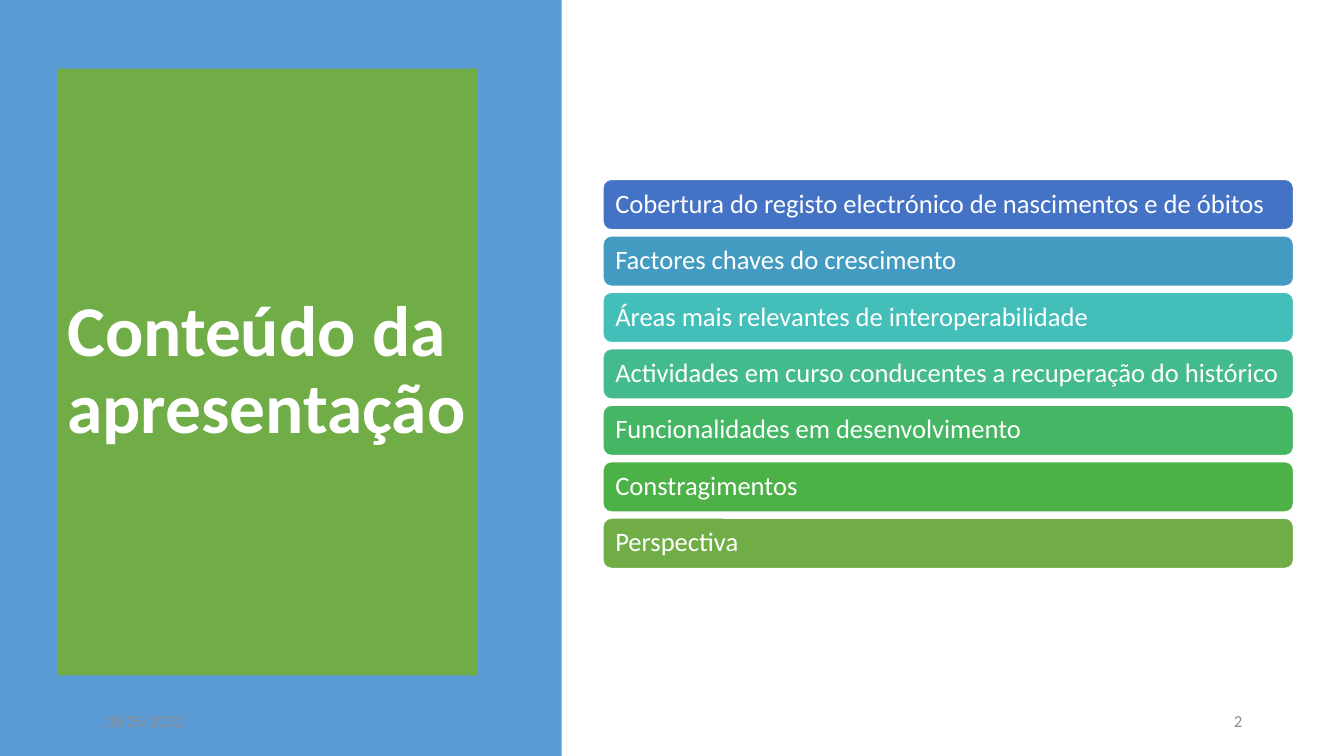
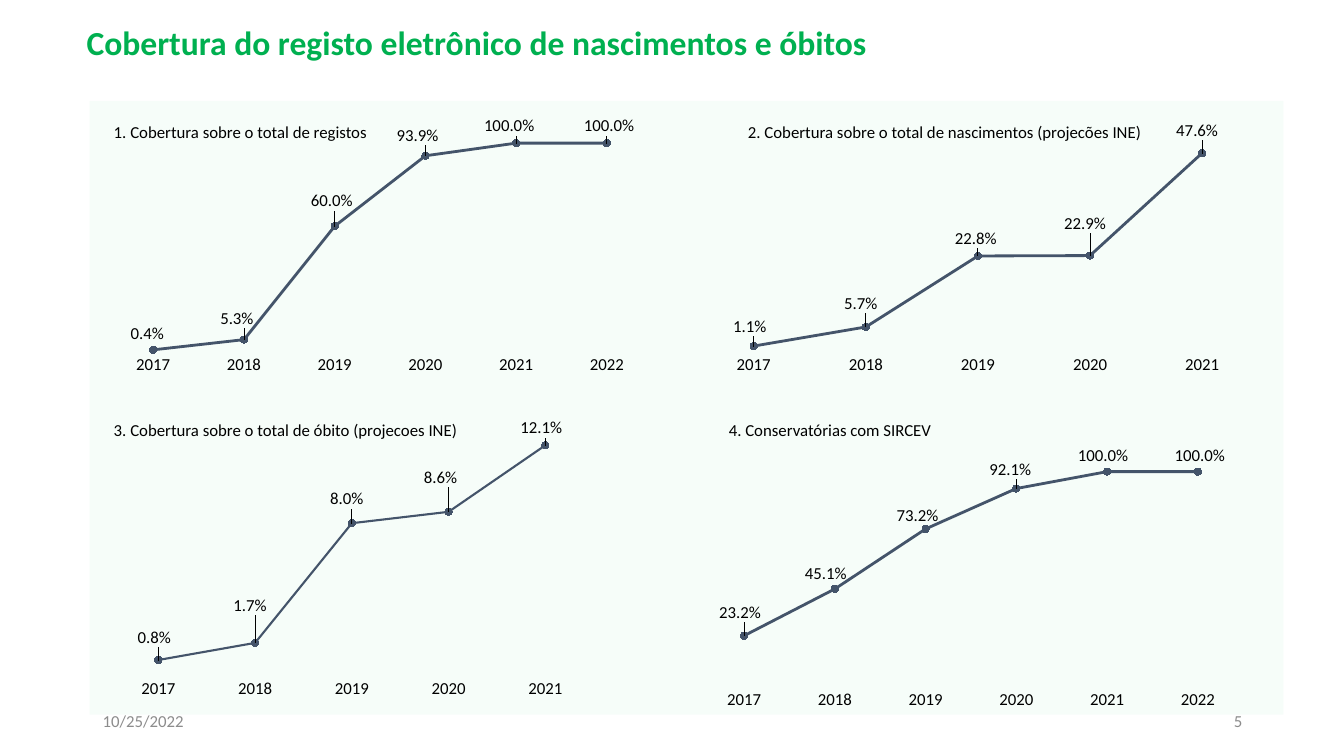
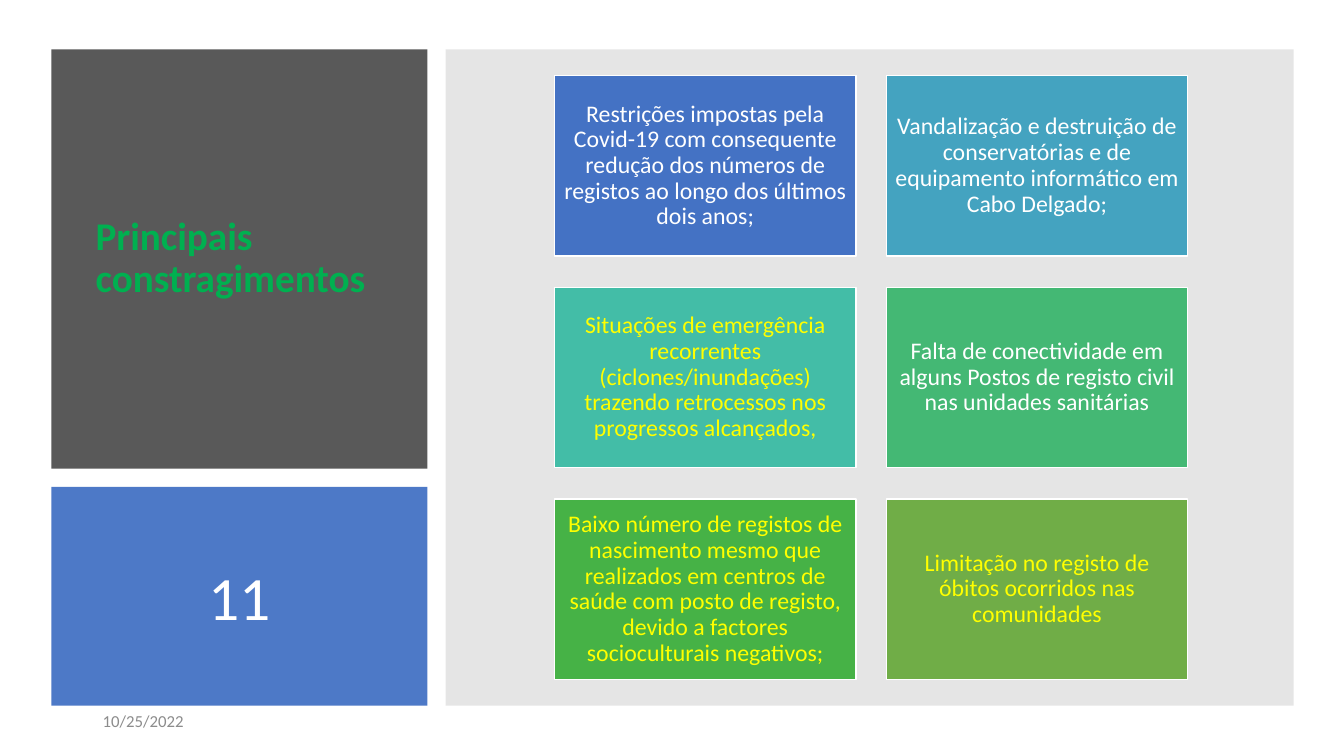
from pptx import Presentation
from pptx.chart.data import CategoryChartData
from pptx.dml.color import RGBColor
from pptx.enum.chart import XL_CHART_TYPE as ChartType, XL_LABEL_POSITION as LabelPosition
from pptx.enum.chart import XL_MARKER_STYLE as MarkerStyle, XL_TICK_MARK as TickMark
from pptx.enum.shapes import MSO_SHAPE as Preset
from pptx.enum.text import MSO_ANCHOR as Anchor, PP_ALIGN as Align
from pptx.oxml import parse_xml
from pptx.oxml.ns import nsdecls, qn
from pptx.util import Emu, Pt

EMU_PER_PX = 9144
WHITE, YELLOW, BLACK = "FFFFFF", "FFFF00", "000000"
BLUE, GREEN, TITLE_GREEN = "4472C4", "70AD47", "00B050"
FOOTER_GREY, LINE_SLATE = "8C8C8C", "44546A"


def px(length):
    return Emu(length * EMU_PER_PX)


def color(value):
    return RGBColor.from_string(value)


def manual_layout(inner=False, **values):
    target = '<c:layoutTarget val="inner"/>' if inner else ""
    modes = '<c:xMode val="edge"/><c:yMode val="edge"/>' if inner else ""
    items = "".join(f'<c:{key} val="{value:.4f}"/>' for key, value in values.items())
    return parse_xml(f'<c:layout {nsdecls("c")}><c:manualLayout>{target}{modes}{items}'
                     '</c:manualLayout></c:layout>')


def no_fill():
    return parse_xml(f'<c:spPr {nsdecls("c", "a")}><a:noFill/><a:ln><a:noFill/></a:ln></c:spPr>')


class Deck:
    font = "Calibri"
    date = "10/25/2022"

    def __init__(self):
        self.presentation = Presentation()
        self.presentation.slide_width = px(1333)
        self.presentation.slide_height = px(750)
        self.slide = None

    def add_slide(self):
        self.slide = self.presentation.slides.add_slide(self.presentation.slide_layouts[6])

    def fill_text(self, shape, text, size, ink, bold=False, align=Align.LEFT, spacing=1.0, inset=10):
        frame = shape.text_frame
        frame.word_wrap = True
        frame.vertical_anchor = Anchor.MIDDLE
        frame.margin_left = frame.margin_right = px(inset)
        frame.margin_top = frame.margin_bottom = px(5)
        frame.text = text
        paragraph = frame.paragraphs[0]
        paragraph.alignment = align
        paragraph.line_spacing = spacing
        font = paragraph.runs[0].font
        font.name, font.size, font.bold = self.font, Pt(size), bold
        font.color.rgb = color(ink)

    def box(self, at, fill, preset=Preset.RECTANGLE, opacity=100, outline=None):
        shape = self.slide.shapes.add_shape(preset, *map(px, at))
        shape.shadow.inherit = False
        shape.fill.solid()
        shape.fill.fore_color.rgb = color(fill)
        if opacity < 100:
            tint = shape.element.spPr.find(qn("a:solidFill"))[0]
            tint.append(parse_xml(f'<a:alpha {nsdecls("a")} val="{opacity * 1000}"/>'))
        if outline:
            shape.line.color.rgb = color(outline)
            shape.line.width = Pt(1)
        else:
            shape.line.fill.background()
        return shape

    def text(self, at, text, size, ink, **style):
        self.fill_text(self.slide.shapes.add_textbox(*map(px, at)), text, size, ink, **style)

    def title(self, at, text, size):
        self.text(at, text, size, TITLE_GREEN, bold=True, spacing=0.9)

    def footer(self, number=None):
        self.text((92, 695, 300, 40), self.date, 12, FOOTER_GREY)
        if number:
            self.text((942, 695, 300, 40), number, 12, FOOTER_GREY, align=Align.RIGHT)

    def line_chart(self, at, plot, top_value, width, values, offsets):
        data = CategoryChartData(number_format="0.0%")
        data.categories = [str(2017 + index) for index in range(len(values))]
        data.add_series("Series 1", values)
        frame = self.slide.shapes.add_chart(ChartType.LINE_MARKERS, *map(px, at), data)
        chart = frame.chart
        chart.has_legend = chart.has_title = False
        self.place_plot(chart, at, plot)
        chart.font.name, chart.font.size = self.font, Pt(12)
        chart.font.color.rgb = color(BLACK)

        category_axis, value_axis = chart.category_axis, chart.value_axis
        category_axis.major_tick_mark = TickMark.NONE
        category_axis.format.line.fill.background()
        value_axis.visible = value_axis.has_major_gridlines = False
        value_axis.minimum_scale, value_axis.maximum_scale = 0, top_value

        chart.plots[0].vary_by_categories = False
        series = chart.plots[0].series[0]
        series.smooth = False
        series.format.line.color.rgb = color(LINE_SLATE)
        series.format.line.width = Pt(width)
        marker = series.marker
        marker.style, marker.size = MarkerStyle.CIRCLE, 5
        marker.format.fill.solid()
        marker.format.fill.fore_color.rgb = color(LINE_SLATE)
        marker.format.line.color.rgb = color(LINE_SLATE)
        self.label_points(chart, series, at, offsets)

    def place_plot(self, chart, at, plot):
        left, top, width, height = at
        plot_left, plot_top, plot_width, plot_height = plot
        area = chart.element.find(qn("c:chart")).find(qn("c:plotArea"))
        for layout in area.findall(qn("c:layout")):
            area.remove(layout)
        area.insert(0, manual_layout(True, x=(plot_left - left) / width, y=(plot_top - top) / height,
                                     w=plot_width / width, h=plot_height / height))
        area.append(no_fill())
        chart.element.find(qn("c:chart")).addnext(no_fill())

    def label_points(self, chart, series, at, offsets):
        labels = series.data_labels
        labels.show_value = True
        labels.number_format, labels.number_format_is_linked = "0.0%", False
        labels.position = LabelPosition.CENTER
        labels.font.name, labels.font.size = self.font, Pt(12)
        labels.font.color.rgb = color(BLACK)
        for index in range(len(offsets)):
            series.points[index].data_label.position = LabelPosition.CENTER
        for label, (right, down) in zip(chart.element.xpath(".//c:dLbl"), offsets):
            label[0].addnext(manual_layout(x=right / at[2], y=down / at[3]))


def contents_slide(deck):
    topics = [
        ("Cobertura do registo electrónico de nascimentos e de óbitos", BLUE),
        ("Factores chaves do crescimento", "449BC1"),
        ("Áreas mais relevantes de interoperabilidade", "43BEB9"),
        ("Actividades em curso conducentes a recuperação do histórico", "43BB8D"),
        ("Funcionalidades em desenvolvimento", "45B664"),
        ("Constragimentos", "4CB146"),
        ("Perspectiva", GREEN),
    ]
    deck.add_slide()
    deck.box((0, 0, 557, 750), "5B9BD5")
    panel = deck.box((57, 68, 416, 602), GREEN)
    deck.fill_text(panel, "Conteúdo da apresentação", 51, WHITE, bold=True, spacing=0.9)
    for row, (topic, fill) in enumerate(topics):
        bar = deck.box((598, 178 + 56 * row, 685, 50), fill, Preset.ROUNDED_RECTANGLE, outline=WHITE)
        deck.fill_text(bar, topic, 19, WHITE, spacing=0.9)
    deck.footer("2")


def coverage_slide(deck):
    deck.add_slide()
    deck.box((89, 100, 1184, 609), "2ECC71", opacity=4)
    deck.title((76, 9, 1158, 71), "Cobertura do registo eletrônico de nascimentos e óbitos", 24)
    charts = [
        ((96, 95, 562, 283), (107, 142, 540, 206), 1, 2,
         (0.004, 0.053, 0.6, 0.939, 1, 1),
         ((-6, -16), (-7, -21), (-3, -25), (-8, -20), (-7, -17), (2, -17))),
        ((681, 95, 579, 283), (692, 142, 556, 206), 0.5, 2,
         (0.011, 0.057, 0.228, 0.229, 0.476),
         ((-4, -19), (-5, -23), (-2, -17), (-5, -32), (-5, -22))),
        ((99, 400, 500, 300), (109, 406, 480, 264), 0.14, 1.5,
         (0.008, 0.017, 0.08, 0.086, 0.121),
         ((-4, -22), (-5, -37), (-5, -24), (-8, -34), (-4, -17))),
        ((682, 421, 562, 289), (693, 468, 540, 212), 1, 2,
         (0.232, 0.451, 0.732, 0.921, 1, 1),
         ((-4, -23), (-9, -15), (-8, -13), (-6, -19), (-4, -16), (2, -16))),
    ]
    for chart in charts:
        deck.line_chart(*chart)
    captions = [
        (103, 116, "1. Cobertura sobre o total de registos"),
        (732, 116, "2. Cobertura sobre o total de nascimentos (projecões INE)"),
        (103, 411, "3. Cobertura sobre o total de óbito (projecoes INE)"),
        (713, 411, "4. Conservatórias com SIRCEV"),
    ]
    for left, top, caption in captions:
        deck.text((left, top, 476, 30), caption, 12, BLACK)
    deck.footer("5")


def constraints_slide(deck):
    constraints = [
        ("Restrições impostas pela Covid-19 com consequente redução dos números de registos "
         "ao longo dos últimos dois anos;", BLUE, WHITE),
        ("Vandalização e destruição de conservatórias e de equipamento informático em "
         "Cabo Delgado;", "44A3C0", WHITE),
        ("Situações de emergência recorrentes (ciclones/inundações) trazendo retrocessos nos "
         "progressos alcançados,", "43BDA7", YELLOW),
        ("Falta de conectividade em alguns Postos de registo civil nas unidades sanitárias",
         "44B874", WHITE),
        ("Baixo número de registos de nascimento mesmo que realizados em centros de saúde com "
         "posto de registo, devido a factores socioculturais negativos;", "46B246", YELLOW),
        ("Limitação no registo de óbitos ocorridos nas comunidades", GREEN, YELLOW),
    ]
    deck.add_slide()
    deck.box((51, 49, 373, 416), "595959")
    deck.title((85, 49, 305, 416), "Principais constragimentos", 28)
    number_panel = deck.box((51, 483, 373, 217), BLUE, opacity=95)
    deck.fill_text(number_panel, "11", 44, WHITE, align=Align.CENTER)
    deck.box((442, 49, 841, 651), "808080", opacity=20)
    for index, (constraint, fill, ink) in enumerate(constraints):
        row, column = divmod(index, 2)
        card = deck.box((550 + 329 * column, 75 + 210 * row, 299, 179), fill, outline=WHITE)
        deck.fill_text(card, constraint, 17, ink, align=Align.CENTER, spacing=0.9, inset=7)
    deck.footer()


def main():
    deck = Deck()
    contents_slide(deck)
    coverage_slide(deck)
    constraints_slide(deck)
    deck.presentation.save("out.pptx")


if __name__ == "__main__":
    main()
